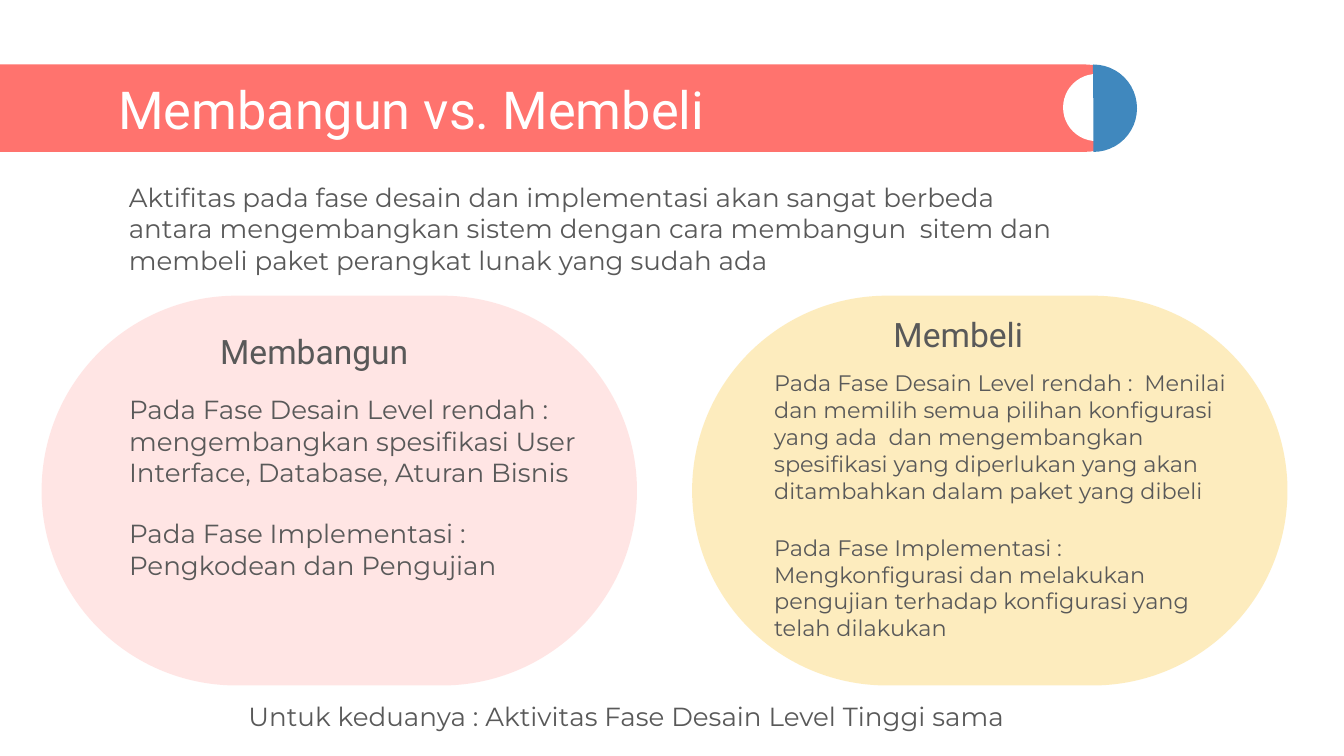
from pptx import Presentation
from pptx.dml.color import RGBColor
from pptx.enum.shapes import MSO_SHAPE
from pptx.enum.text import MSO_ANCHOR, MSO_AUTO_SIZE, PP_ALIGN
from pptx.oxml.ns import qn
from pptx.util import Inches, Pt
from lxml import etree

ROUNDED, OVAL, PIE = MSO_SHAPE.ROUNDED_RECTANGLE, MSO_SHAPE.OVAL, MSO_SHAPE.PIE
TOP, MIDDLE = MSO_ANCHOR.TOP, MSO_ANCHOR.MIDDLE
LEFT, NO_FIT = PP_ALIGN.LEFT, MSO_AUTO_SIZE.NONE

THEME = {
    "coral": "FF736E", "blue": "4088BE", "yellow": "FBBE18",
    "white": "FFFFFF", "grey": "595959",
    "heading": "Roboto", "text": "Montserrat",
    "title_size": 28, "subtitle_size": 18, "text_size": 14, "small_size": 12,
}

deck = Presentation()
deck.slide_width, deck.slide_height = Inches(10), Inches(5.625)
# The grid has 100 columns and 100 rows.
COLUMN, ROW = deck.slide_width / 100, deck.slide_height / 100
page = deck.slides.add_slide(deck.slide_layouts[3])
shapes = page.shapes


def add_panel(kind, area, color, opacity=100, turn=0):
    """Add a filled shape without outline; area is in columns and rows."""
    left, top, width, height = area
    panel = shapes.add_shape(kind, int(left * COLUMN), int(top * ROW),
                             int(width * COLUMN), int(height * ROW))
    panel.shadow.inherit = False
    panel.line.fill.background()
    panel.fill.solid()
    panel.fill.fore_color.rgb = RGBColor.from_string(THEME[color])
    panel.rotation = turn
    if kind == ROUNDED:
        panel.adjustments[0] = 0.5
    if opacity < 100:
        tint = panel.fill._xPr.find(".//" + qn("a:srgbClr"))
        etree.SubElement(tint, qn("a:alpha"), val=str(opacity * 1000))
    return panel


def write(box, area, paragraphs, size, font="text", color="grey",
          anchor=TOP, gap=0, inset=0.1):
    """Place a text box or placeholder on the grid and fill it."""
    left, top, width, height = area
    box.left, box.top = int(left * COLUMN), int(top * ROW)
    box.width, box.height = int(width * COLUMN), int(height * ROW)
    frame = box.text_frame
    frame.word_wrap, frame.auto_size = True, NO_FIT
    frame.vertical_anchor = anchor
    frame.margin_left = frame.margin_right = Inches(0.1)
    frame.margin_top = frame.margin_bottom = Inches(inset)
    for number, text in enumerate(paragraphs):
        para = frame.add_paragraph() if number else frame.paragraphs[0]
        para.alignment = LEFT
        para.space_before, para.space_after = Pt(0), Pt(gap)
        properties = para._p.get_or_add_pPr()
        properties.set("marL", "0")
        properties.set("indent", "0")
        etree.SubElement(properties, qn("a:buNone"))
        span = para.add_run()
        span.text = text
        span.font.name, span.font.size = THEME[font], Pt(THEME[size])
        span.font.color.rgb = RGBColor.from_string(THEME[color])


# Banner with its round end
add_panel(ROUNDED, (-3.2, 8.53, 87.2, 11.56), "coral")
add_panel(OVAL, (79.1, 9.78, 5, 8.89), "white", turn=180)
half_disc = add_panel(PIE, (78.1, 8.53, 6.5, 11.56), "blue", turn=180)
half_disc.adjustments[0], half_disc.adjustments[1] = 53.67, 162

# Pills behind the two options
for left, color, opacity in ((51.5, "yellow", 28), (3.1, "coral", 18)):
    add_panel(ROUNDED, (left, 39.11, 44.3, 51.56), color, opacity)

# Placeholders go in front of the panels
title, build_body, buy_body = list(page.placeholders)
for placeholder in (title, build_body, buy_body):
    shapes._spTree.append(placeholder._element)

write(title, (7.8, 10.67, 69.7, 7.29), ["Membangun vs. Membeli"],
      "title_size", "heading", "white", MIDDLE)

intro = shapes.add_textbox(0, 0, 0, 0)
write(intro, (8.6, 22.22, 71.5, 15.82), [
    "Aktifitas pada fase desain dan implementasi akan sangat berbeda antara "
    "mengembangkan sistem dengan cara membangun  sitem dan membeli paket "
    "perangkat lunak yang sudah ada"], "text_size", gap=16)

options = [
    ("Membangun", (15.4, 36.98), build_body, (8.6, 50.31), "text_size", [
        "Pada Fase Desain Level rendah : mengembangkan spesifikasi User "
        "Interface, Database, Aturan Bisnis",
        "Pada Fase Implementasi : Pengkodean dan Pengujian"]),
    ("Membeli", (65.5, 34.67), buy_body, (56.6, 47.11), "small_size", [
        "Pada Fase Desain Level rendah :  Menilai dan memilih semua pilihan "
        "konfigurasi yang ada  dan mengembangkan spesifikasi yang diperlukan "
        "yang akan ditambahkan dalam paket yang dibeli",
        "Pada Fase Implementasi : Mengkonfigurasi dan melakukan pengujian "
        "terhadap konfigurasi yang telah dilakukan"]),
]
for name, name_corner, body, body_corner, size, phases in options:
    write(body, (*body_corner, 36.7, 15.82), phases, size, gap=16)
    subtitle = shapes.add_textbox(0, 0, 0, 0)
    write(subtitle, (*name_corner, 46, 19.02), [name],
          "subtitle_size", "heading", anchor=MIDDLE)

footer = shapes.add_textbox(0, 0, 0, 0)
write(footer, (17.5, 91.73, 69.6, 6.04),
      ["Untuk keduanya : Aktivitas Fase Desain Level Tinggi sama"],
      "text_size", inset=0.05)

deck.save("out.pptx")
